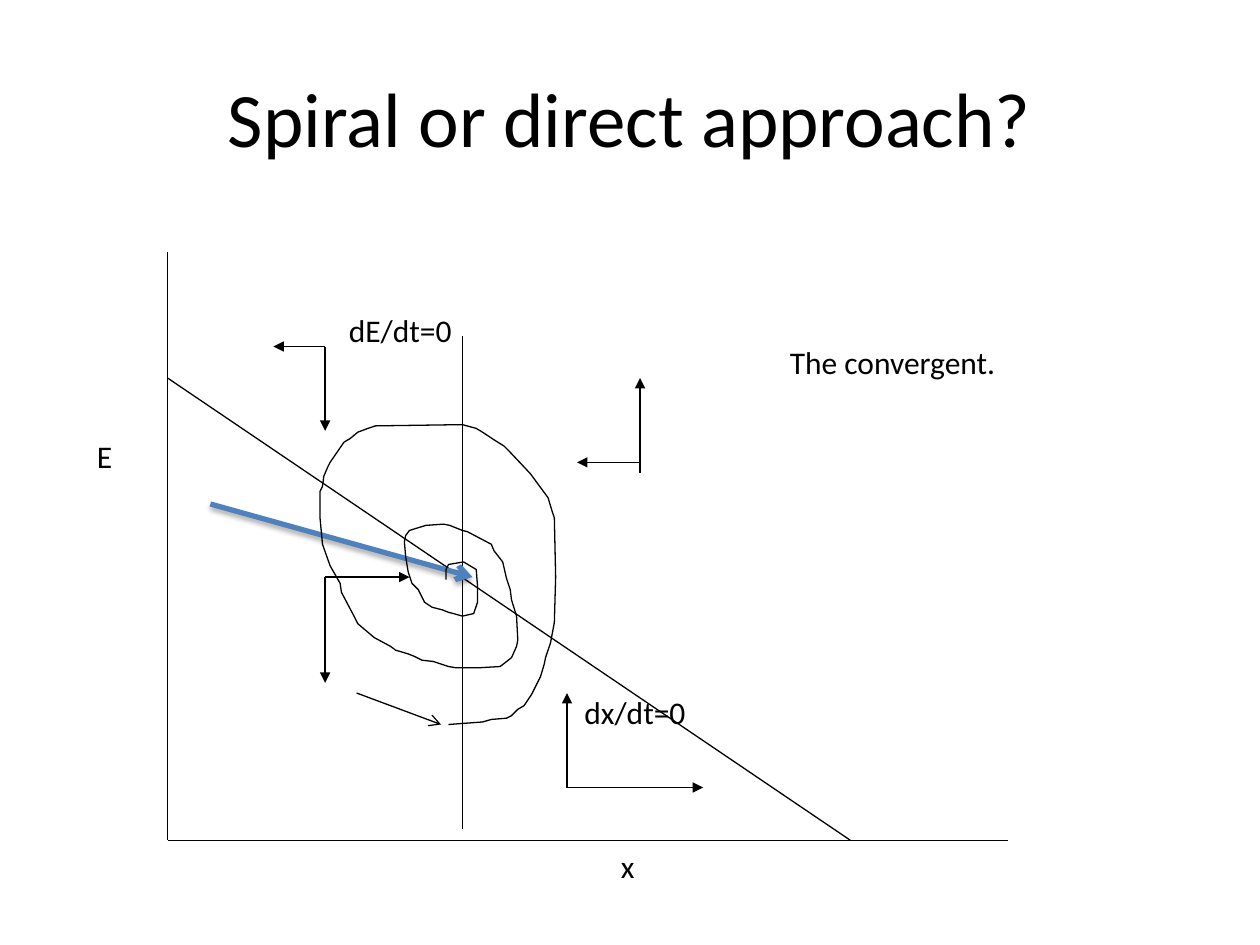
from lxml.etree import SubElement
from pptx import Presentation
from pptx.dml.color import RGBColor
from pptx.enum.shapes import MSO_CONNECTOR as Connector
from pptx.enum.text import MSO_ANCHOR as Anchor, PP_ALIGN as Align
from pptx.oxml.ns import qn
from pptx.util import Pt

PX = 9144
BLACK = RGBColor(0x00, 0x00, 0x00)
BLUE = RGBColor(0x4F, 0x81, 0xBD)
FONT = "Calibri"

SPIRAL = [
    (106, 238), (133, 236), (140, 234), (152, 233), (156, 231), (161, 226),
    (166, 223), (172, 214), (179, 200), (182, 190), (183, 185), (187, 173),
    (190, 157), (191, 121), (190, 74), (188, 68), (185, 58), (171, 39),
    (155, 22), (150, 17), (142, 12), (133, 6), (128, 3), (117, 0),
    (48, 1), (42, 3), (34, 6), (28, 11), (23, 14), (12, 30),
    (10, 34), (7, 41), (6, 49), (4, 53), (4, 74), (6, 95),
    (12, 112), (20, 126), (21, 133), (31, 152), (34, 158), (47, 169),
    (60, 176), (64, 179), (74, 182), (79, 184), (85, 187), (94, 188),
    (106, 192), (112, 193), (130, 193), (147, 192), (156, 185), (160, 176),
    (161, 171), (160, 152), (156, 139), (155, 131), (152, 122), (149, 109),
    (142, 100), (140, 95), (121, 85), (117, 84), (107, 80), (102, 79),
    (88, 80), (75, 84), (72, 88), (71, 93), (72, 105), (74, 117),
    (77, 126), (82, 131), (87, 141), (93, 145), (101, 147), (106, 149),
    (110, 150), (117, 152), (126, 150), (129, 141), (129, 128), (128, 115),
    (118, 109), (106, 111), (104, 115), (104, 123),
]


def add_text(slide, text, left, top, width, height, size=18, align=Align.LEFT,
             anchor=Anchor.TOP, wrap=True):
    shape = slide.shapes.add_textbox(left * PX, top * PX, width * PX, height * PX)
    frame = shape.text_frame
    frame.word_wrap = wrap
    frame.vertical_anchor = anchor
    paragraph = frame.paragraphs[0]
    paragraph.alignment = align
    run = paragraph.add_run()
    run.text = text
    run.font.name = FONT
    run.font.size = Pt(size)
    run.font.color.rgb = BLACK


def add_line(slide, start, end, color=BLACK, width=0.75, head=None, shadow=False):
    x1, y1 = start
    x2, y2 = end
    line = slide.shapes.add_connector(
        Connector.STRAIGHT, x1 * PX, y1 * PX, x2 * PX, y2 * PX)
    line.line.color.rgb = color
    line.line.width = Pt(width)
    properties = line._element.spPr
    if head:
        SubElement(properties.find(qn("a:ln")), qn("a:tailEnd"), type=head)
    effects = SubElement(properties, qn("a:effectLst"))
    if shadow:
        outer = SubElement(effects, qn("a:outerShdw"), blurRad="39370",
                           dist="23000", dir="5400000", rotWithShape="0")
        tint = SubElement(outer, qn("a:srgbClr"), val=str(BLACK))
        SubElement(tint, qn("a:alpha"), val="35000")


def add_axes(slide, left, top, width, height):
    bottom = top + height
    add_line(slide, (left, top), (left, bottom))
    add_line(slide, (left, bottom), (left + width, bottom))
    add_text(slide, "E", left - 66, top + 142, 58, 50)
    add_text(slide, "x", left + 350, bottom, 58, 50)


def add_nullclines(slide, left, top, width, height):
    add_line(slide, (left, top + 100), (left + 542, top + height))
    add_line(slide, (left + 234, top + 67), (left + 234, top + 458))
    add_text(slide, "dx/dt=0", left + 321, top + 345, 140, 50, wrap=False)
    add_text(slide, "dE/dt=0", left + 134, top + 42, 142, 50, wrap=False)


def add_direction_arrows(slide, left, top):
    arrows = [
        ((375, 167), (325, 167)), ((375, 175), (375, 100)),
        ((317, 425), (425, 425)), ((317, 425), (317, 350)),
        ((125, 75), (125, 142)), ((125, 75), (84, 75)),
        ((125, 258), (125, 342)), ((125, 258), (192, 258)),
    ]
    for (x1, y1), (x2, y2) in arrows:
        add_line(slide, (left + x1, top + y1), (left + x2, top + y2),
                 head="triangle")


def add_trajectories(slide, left, top):
    add_line(slide, (left + 34, top + 200), (left + 242, top + 258),
             color=BLUE, width=3, head="arrow", shadow=True)
    builder = slide.shapes.build_freeform(*SPIRAL[0], scale=PX)
    builder.add_line_segments(SPIRAL[1:], close=False)
    spiral = builder.convert_to_shape((left + 117) * PX, (top + 137) * PX)
    spiral.shadow.inherit = False
    spiral.fill.background()
    spiral.line.color.rgb = BLACK
    spiral.line.width = Pt(0.75)
    add_line(slide, (left + 150, top + 350), (left + 217, top + 375), head="arrow")


def add_phase_plane(slide, left, top, width, height):
    add_axes(slide, left, top, width, height)
    add_nullclines(slide, left, top, width, height)
    add_direction_arrows(slide, left, top)
    add_trajectories(slide, left, top)


def main():
    presentation = Presentation()
    presentation.slide_width = 1000 * PX
    presentation.slide_height = 750 * PX
    slide = presentation.slides.add_slide(presentation.slide_layouts[6])
    add_text(slide, "Spiral or direct approach?", 50, 30, 900, 125, size=44,
             align=Align.CENTER, anchor=Anchor.MIDDLE)
    add_phase_plane(slide, 133, 200, 667, 467)
    add_text(slide, "The convergent.", 617, 267, 283, 50)
    presentation.save("out.pptx")


if __name__ == "__main__":
    main()
